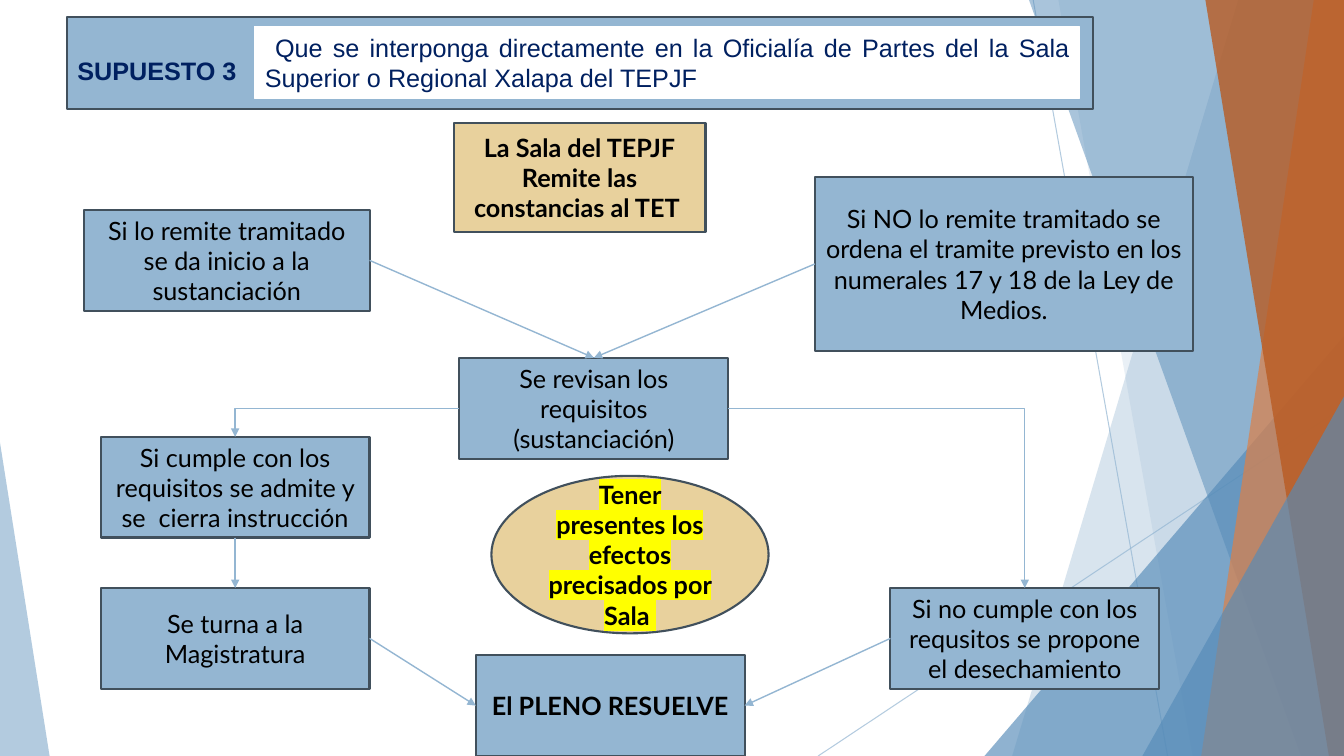
"""Build the "Supuesto 3" procedure flowchart slide."""
from dataclasses import dataclass

import lxml.etree
import pptx
import pptx.dml.color
import pptx.enum.shapes
import pptx.enum.text
import pptx.oxml.ns
import pptx.util

COLUMNS, ROWS = 160, 90
SLIDE_WIDTH = pptx.util.Inches(13.33)
SLIDE_HEIGHT = pptx.util.Inches(7.5)
COLORS = {
    "blue": "94B6D2", "deep blue": "558BB8", "orange": "DD8047", "rust": "B95B22",
    "sand": "E8D19D", "outline": "41505C", "navy": "002060", "black": "000000",
    "white": "FFFFFF", "yellow": "FFFF00",
}
ALIGN = pptx.enum.text.PP_ALIGN
ANCHOR = pptx.enum.text.MSO_ANCHOR
SHAPE = pptx.enum.shapes.MSO_SHAPE
CONNECTOR = pptx.enum.shapes.MSO_CONNECTOR
TOP, LEFT, BOTTOM, RIGHT = range(4)


@dataclass
class Facet:
    """Band reaching the right edge, with a slanted left side."""
    top_column: float
    bottom_column: float
    color: str
    opacity: int


@dataclass
class Wedge:
    """Right triangle standing on the bottom edge."""
    left: float
    top: float
    width: float
    apex: int
    color: str
    opacity: int


@dataclass
class Box:
    """Filled shape of the flowchart, placed in grid cells."""
    name: str
    text: str
    left: float
    top: float
    width: float = 32
    height: float = 12
    fill: str = "blue"
    line: str = "outline"
    line_width: float = 1.5
    bold: bool = False
    kind: SHAPE = SHAPE.RECTANGLE
    highlight: str = ""


@dataclass
class Arrow:
    """Arrow joining sides of two boxes."""
    source: str
    source_side: int
    target: str
    target_side: int
    bent: bool = False


BACKGROUND = [
    Facet(147.4, 120.5, "blue", 36),
    Facet(126, 142, "blue", 20),
    Wedge(117.2, 40, 42.8, 1, "deep blue", 66),
    Facet(122.5, 154.9, "deep blue", 50),
    Facet(156.4, 143, "orange", 70),
    Facet(143.5, 158.2, "rust", 80),
    Wedge(136, 47.2, 24, 1, "deep blue", 66),
    Wedge(0, 52.7, 5.9, 0, "blue", 70),
]
HEADER = Box("header", "", 8, 2, 122.15, 11)
PREMISE = Box("premise", " Que se interponga directamente en la Oficialía de Partes del la Sala "
              "Superior o Regional Xalapa del TEPJF", 30.35, 3.2, 98.2, 8.5,
              "white", "white", 0.75)
BOXES = [
    Box("remits", "La Sala del TEPJF\nRemite las constancias al TET ",
        54, 14.6, 30, 13, "sand", bold=True),
    Box("processed", "Si lo remite tramitado se da inicio a la sustanciación", 10, 25, 34),
    Box("unprocessed", "Si NO lo remite tramitado se ordena el tramite previsto en los "
        "numerales 17 y 18 de la Ley de Medios.", 97, 21.1, 45, 20.65),
    Box("review", "Se revisan los requisitos (sustanciación)", 54.7, 42.6),
    Box("admitted", "Si cumple con los requisitos se admite y se  cierra instrucción", 12, 52),
    Box("dismissed", "Si no cumple con los requsitos se propone el desechamiento", 106, 70),
    Box("assigned", "Se turna a la Magistratura", 12, 70),
    Box("plenary", "El PLENO RESUELVE", 56.65, 78, bold=True),
    Box("effects", "Tener presentes los efectos precisados por Sala ", 58.5, 56.65, 33, 18.75,
        "sand", bold=True, kind=SHAPE.OVAL, highlight="yellow"),
]
ARROWS = [
    Arrow("processed", RIGHT, "review", TOP),
    Arrow("unprocessed", LEFT, "review", TOP),
    Arrow("review", RIGHT, "dismissed", TOP, bent=True),
    Arrow("review", LEFT, "admitted", TOP, bent=True),
    Arrow("admitted", BOTTOM, "assigned", TOP),
    Arrow("assigned", RIGHT, "plenary", LEFT),
    Arrow("dismissed", LEFT, "plenary", RIGHT),
]


def across(columns: float) -> int:
    return round(SLIDE_WIDTH * columns / COLUMNS)


def down(rows: float) -> int:
    return round(SLIDE_HEIGHT * rows / ROWS)


def rgb(color: str) -> pptx.dml.color.RGBColor:
    return pptx.dml.color.RGBColor.from_string(COLORS[color])


def add_element(parent, tag: str, **attributes: str):
    return lxml.etree.SubElement(parent, pptx.oxml.ns.qn(tag), attributes)


def set_opacity(color_format_owner, opacity: int) -> None:
    for color in color_format_owner.iter(pptx.oxml.ns.qn("a:srgbClr")):
        add_element(color, "a:alpha", val=str(opacity * 1000))


def write_text(shape, text: str, *, font: str = "Lato", color: str = "black",
               bold: bool = False, align: ALIGN = ALIGN.CENTER,
               anchor: ANCHOR = ANCHOR.MIDDLE, highlight: str = "") -> None:
    frame = shape.text_frame
    frame.text = text
    frame.word_wrap = True
    frame.auto_size = pptx.enum.text.MSO_AUTO_SIZE.NONE
    frame.vertical_anchor = anchor
    for paragraph in frame.paragraphs:
        paragraph.alignment = align
        for run in paragraph.runs:
            run.font.size = pptx.util.Pt(18)
            run.font.name = font
            run.font.bold = bold
            run.font.color.rgb = rgb(color)
            if highlight:
                properties = run.font._element
                mark = add_element(properties, "a:highlight")
                add_element(mark, "a:srgbClr", val=COLORS[highlight])
                properties.find(pptx.oxml.ns.qn("a:solidFill")).addnext(mark)


def draw_background(slide, part: Facet | Wedge) -> None:
    if isinstance(part, Facet):
        builder = slide.shapes.build_freeform(across(part.top_column), 0)
        builder.add_line_segments([(SLIDE_WIDTH, 0), (SLIDE_WIDTH, SLIDE_HEIGHT),
                                   (across(part.bottom_column), SLIDE_HEIGHT)])
        shape = builder.convert_to_shape()
    else:
        shape = slide.shapes.add_shape(SHAPE.ISOSCELES_TRIANGLE, across(part.left),
                                       down(part.top), across(part.width),
                                       down(ROWS - part.top))
        shape.adjustments[0] = part.apex
    shape.shadow.inherit = False
    shape.fill.solid()
    shape.fill.fore_color.rgb = rgb(part.color)
    shape.line.fill.background()
    set_opacity(shape._element.spPr, part.opacity)


def draw_box(slide, box: Box):
    shape = slide.shapes.add_shape(box.kind, across(box.left), down(box.top),
                                   across(box.width), down(box.height))
    shape.shadow.inherit = False
    shape.fill.solid()
    shape.fill.fore_color.rgb = rgb(box.fill)
    shape.line.color.rgb = rgb(box.line)
    shape.line.width = pptx.util.Pt(box.line_width)
    if box.text:
        write_text(shape, box.text, bold=box.bold, highlight=box.highlight)
    return shape


def draw_line(slide, ends: tuple[float, float, float, float] = (0, 0, 0, 0),
              kind: CONNECTOR = CONNECTOR.STRAIGHT, width: float = 1):
    x1, y1, x2, y2 = ends
    line = slide.shapes.add_connector(kind, across(x1), down(y1), across(x2), down(y2))
    line.line.color.rgb = rgb("blue")
    line.line.width = pptx.util.Pt(width)
    add_element(line._element.spPr, "a:effectLst")
    return line


def draw_arrow(slide, arrow: Arrow, shapes: dict) -> None:
    line = draw_line(slide, kind=CONNECTOR.ELBOW if arrow.bent else CONNECTOR.STRAIGHT)
    line.begin_connect(shapes[arrow.source], arrow.source_side)
    line.end_connect(shapes[arrow.target], arrow.target_side)
    add_element(line.line._get_or_add_ln(), "a:tailEnd", type="triangle")
    if arrow.bent:
        line._element.spPr.find(pptx.oxml.ns.qn("a:prstGeom")).set("prst", "bentConnector2")


def main() -> None:
    presentation = pptx.Presentation()
    presentation.slide_width, presentation.slide_height = SLIDE_WIDTH, SLIDE_HEIGHT
    slide = presentation.slides.add_slide(presentation.slide_layouts[5])
    for ends in ((123, 0, 139, ROWS), (COLUMNS, 48.4, 97.4, ROWS)):
        set_opacity(draw_line(slide, ends, width=0.75)._element.spPr, 70)
    for part in BACKGROUND:
        draw_background(slide, part)

    draw_box(slide, HEADER)
    title = slide.shapes.title
    title.left, title.top, title.width, title.height = across(8), down(6), across(24), down(4.8)
    write_text(title, "SUPUESTO 3", font="Arial", color="navy", bold=True,
               align=ALIGN.LEFT, anchor=ANCHOR.TOP)
    slide.shapes._spTree.append(title._element)
    write_text(draw_box(slide, PREMISE), PREMISE.text, font="Arial", color="navy",
               align=ALIGN.JUSTIFY, anchor=ANCHOR.TOP)

    shapes = {box.name: draw_box(slide, box) for box in BOXES}
    for arrow in ARROWS:
        draw_arrow(slide, arrow, shapes)
    presentation.save("out.pptx")


if __name__ == "__main__":
    main()
